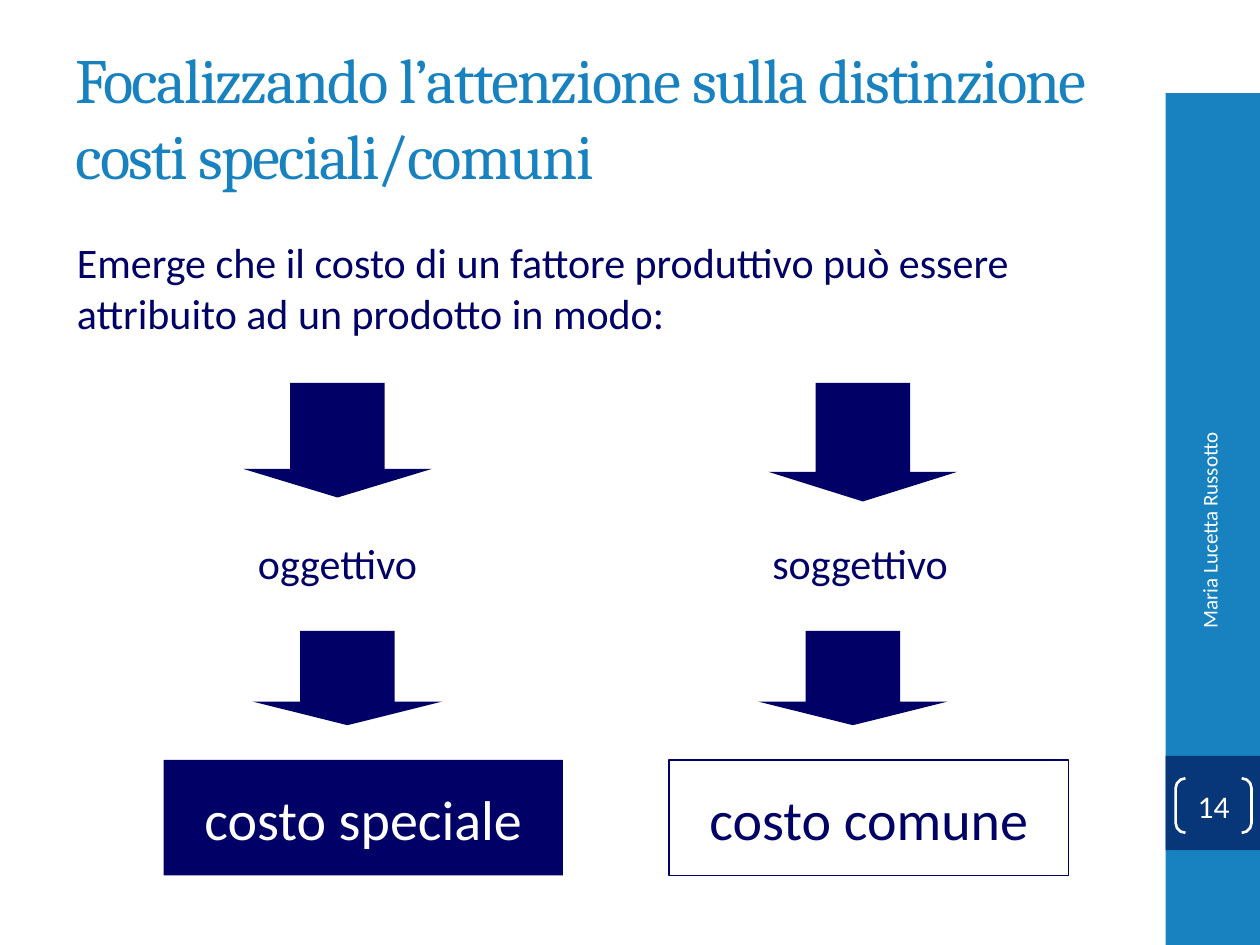
import pptx
import pptx.dml.color
import pptx.enum.shapes
import pptx.enum.text
import pptx.util

Cm = pptx.util.Cm
Shapes = pptx.enum.shapes.MSO_SHAPE
Align = pptx.enum.text.PP_ALIGN
Anchor = pptx.enum.text.MSO_ANCHOR
AutoSize = pptx.enum.text.MSO_AUTO_SIZE

COLORS = {"navy": "000066", "blue": "1782BF", "dark": "073779", "white": "FFFFFF"}
COLUMNS = [
    {"left": 3.3, "label": "oggettivo", "label_left": 1.65, "label_width": 3.76,
     "arrow_left": 1.6, "arrow_height": 2.31,
     "result": "costo speciale", "fill": "navy", "color": "white", "line": None},
    {"left": 13.49, "label": "soggettivo", "label_left": 1.83, "label_width": 4.09,
     "arrow_left": 2.0, "arrow_height": 2.39,
     "result": "costo comune", "fill": "white", "color": "navy", "line": "navy"},
]


def rgb(name):
    """Return the named colour."""
    return pptx.dml.color.RGBColor.from_string(COLORS[name])


def write(shape, text, size, color, align=Align.LEFT, font="Calibri", **frame_format):
    """Put one formatted paragraph into a shape and return its run."""
    frame = shape.text_frame
    for name, value in {"word_wrap": True, "auto_size": AutoSize.NONE, **frame_format}.items():
        setattr(frame, name, value)
    paragraph = frame.paragraphs[0]
    paragraph.alignment = align
    run = paragraph.add_run()
    run.text = text
    for name, value in {"name": font, "size": pptx.util.Pt(size)}.items():
        setattr(run.font, name, value)
    run.font.color.rgb = rgb(color)
    return run


def add_block(slide, kind, box, fill=None, line=None, line_width=0.75):
    """Add a flat preset shape in a box given in centimetres."""
    shape = slide.shapes.add_shape(kind, *map(Cm, box))
    shape.shadow.inherit = False
    if fill:
        shape.fill.solid()
        shape.fill.fore_color.rgb = rgb(fill)
    else:
        shape.fill.background()
    if line:
        shape.line.color.rgb = rgb(line)
        shape.line.width = pptx.util.Pt(line_width)
    else:
        shape.line.fill.background()
    return shape


def add_text(slide, box, *content, **formats):
    """Add a text box in a box given in centimetres."""
    shape = slide.shapes.add_textbox(*map(Cm, box))
    write(shape, *content, **formats)
    return shape


def add_title(slide, box, text):
    """Place and format the title placeholder."""
    title = slide.shapes.title
    title.left, title.top, title.width, title.height = map(Cm, box)
    run = write(title, text, 36, "blue", font="Cambria", vertical_anchor=Anchor.MIDDLE)
    run.font._element.set("spc", "-100")


def add_sidebar(slide, left, top, width, height):
    """Draw the side band with the author and the page number."""
    add_block(slide, Shapes.RECTANGLE, (left, top, width, height), "blue")
    number_top = top + 13.36
    add_block(slide, Shapes.RECTANGLE, (left, number_top, width, width), "dark")
    author = add_text(slide, (left - 2.41, top + 9.37, 6.58, 1.02),
                      "Maria Lucetta Russotto", 12, "white",
                      align=Align.RIGHT, vertical_anchor=Anchor.MIDDLE)
    author.rotation = 270
    bracket = add_block(slide, Shapes.DOUBLE_BRACKET,
                        (left + 0.2, number_top + 0.45, 1.53, 1.1),
                        line="white", line_width=1.5)
    bracket.adjustments[0] = 0.18
    margins = {f"margin_{side}": 0 for side in ("left", "top", "right", "bottom")}
    write(bracket, "14", 18, "white", align=Align.CENTER,
          vertical_anchor=Anchor.MIDDLE, **margins)


def add_column(slide, left, top, column):
    """Stack arrow, label, arrow and result box from the given corner."""
    arrows = [(column["arrow_left"], 0, column["arrow_height"]), (1.8, 5.0, 1.9)]
    for offset, drop, height in arrows:
        arrow = add_block(slide, Shapes.DOWN_ARROW,
                          (left + offset, top + drop, 3.81, height), "navy")
        arrow.adjustments[0] = 0.5
        arrow.adjustments[1] = 0.25
    add_text(slide, (left + column["label_left"], top + 3.0, column["label_width"], 1.27),
             column["label"], 24, "navy", word_wrap=False)
    result = add_block(slide, Shapes.RECTANGLE, (left, top + 7.6, 8.05, 2.33),
                       column["fill"], column["line"])
    write(result, column["result"], 32, column["color"], align=Align.CENTER,
          vertical_anchor=Anchor.MIDDLE, word_wrap=False)


def main():
    """Build the slide and save it."""
    presentation = pptx.Presentation()
    presentation.slide_width, presentation.slide_height = Cm(25.4), Cm(19.05)
    slide = presentation.slides.add_slide(presentation.slide_layouts.get_by_name("Title Only"))
    add_sidebar(slide, 23.5, 1.88, 1.9, 17.17)
    add_title(slide, (1.27, 0.76, 21.16, 3.18),
              "Focalizzando l’attenzione sulla distinzione costi speciali/comuni")
    add_text(slide, (1.3, 4.65, 21.13, 2.31),
             "Emerge che il costo di un fattore produttivo può essere "
             "attribuito ad un prodotto in modo:", 24, "navy")
    for column in COLUMNS:
        add_column(slide, column["left"], 7.72, column)
    presentation.save("out.pptx")


if __name__ == "__main__":
    main()
